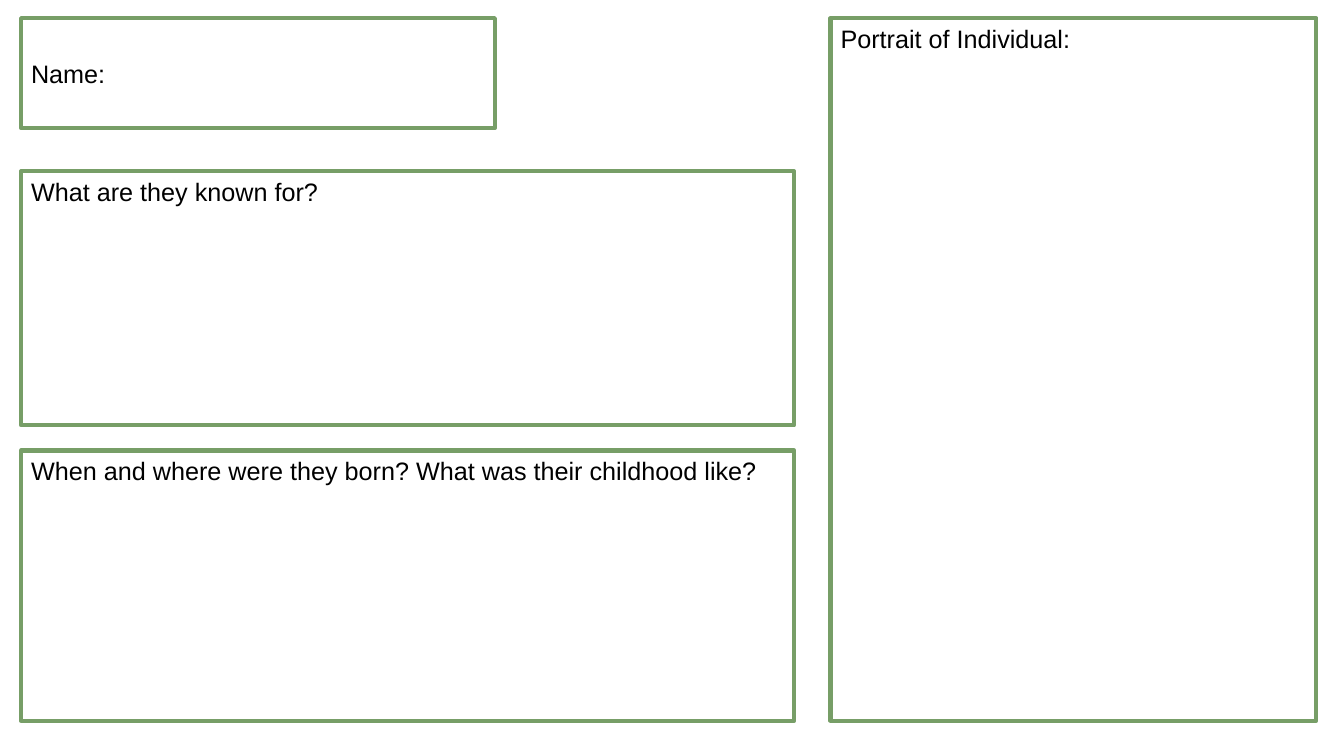
from pptx import Presentation
from pptx.dml.color import RGBColor
from pptx.enum.shapes import MSO_SHAPE
from pptx.enum.text import MSO_ANCHOR, PP_ALIGN
from pptx.util import Pt

RECTANGLE = MSO_SHAPE.RECTANGLE
TOP, MIDDLE = MSO_ANCHOR.TOP, MSO_ANCHOR.MIDDLE
LEFT = PP_ALIGN.LEFT

COLORS = {"border": "779E67", "text": "000000"}
BLANK_LAYOUT = 6

LEFT_COLUMN, RIGHT_COLUMN = 15.1, 593.3
TOP_EDGE, BOTTOM_EDGE = 13, 514.8
QUESTION_WIDTH = 552.2


class Worksheet:
    def __init__(self, slide):
        self.slide = slide
        self.font_name = "Arial"
        self.font_size = 18
        self.border_width = 3

    def add_box(self, prompt, left, top, width, height, anchor=TOP):
        """Add an unfilled answer box with its prompt inside."""
        shape = self.slide.shapes.add_shape(
            RECTANGLE, Pt(left), Pt(top), Pt(width), Pt(height))
        shape.shadow.inherit = False
        shape.fill.background()
        shape.line.color.rgb = RGBColor.from_string(COLORS["border"])
        shape.line.width = Pt(self.border_width)

        text_frame = shape.text_frame
        text_frame.word_wrap = True
        text_frame.vertical_anchor = anchor
        paragraph = text_frame.paragraphs[0]
        paragraph.alignment = LEFT
        run = paragraph.add_run()
        run.text = prompt
        run.font.name = self.font_name
        run.font.size = Pt(self.font_size)
        run.font.color.rgb = RGBColor.from_string(COLORS["text"])


def main():
    presentation = Presentation()
    presentation.slide_width = Pt(960)
    presentation.slide_height = Pt(540)
    layout = presentation.slide_layouts[BLANK_LAYOUT]
    worksheet = Worksheet(presentation.slides.add_slide(layout))

    worksheet.add_box("Name:", LEFT_COLUMN, TOP_EDGE, 338.4, 78.5, MIDDLE)
    questions = [
        ("What are they known for?", 122.4, 303.8),
        ("When and where were they born? What was their childhood like?",
         321.8, BOTTOM_EDGE),
    ]
    for question, top, bottom in questions:
        worksheet.add_box(question, LEFT_COLUMN, top, QUESTION_WIDTH, bottom - top)
    worksheet.add_box("Portrait of Individual:", RIGHT_COLUMN, TOP_EDGE,
                      347, BOTTOM_EDGE - TOP_EDGE)

    presentation.save("out.pptx")


if __name__ == "__main__":
    main()
